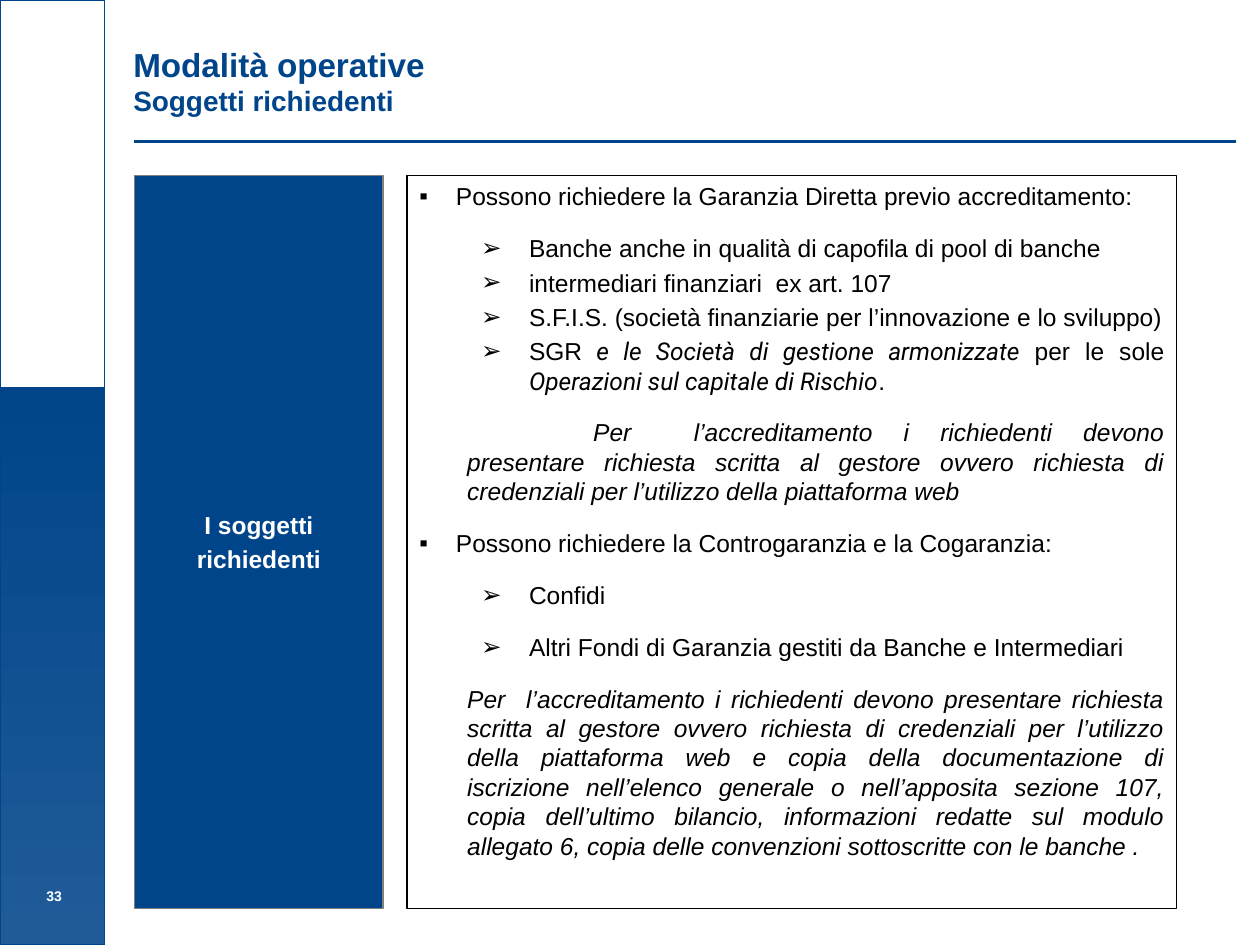
from dataclasses import dataclass

from lxml.etree import SubElement
from pptx import Presentation
from pptx.dml.color import RGBColor as Rgb
from pptx.enum.shapes import MSO_CONNECTOR as Connector, MSO_SHAPE as Shape
from pptx.enum.text import MSO_ANCHOR as Anchor, PP_ALIGN as Align
from pptx.oxml.ns import qn
from pptx.util import Inches, Pt


@dataclass(frozen=True)
class Theme:
    """Colours, fonts and type sizes of the slide."""
    blue: Rgb = Rgb(0x00, 0x45, 0x8A)
    haze: Rgb = Rgb(0x20, 0x5B, 0x98)
    grey: Rgb = Rgb(0x80, 0x80, 0x80)
    white: Rgb = Rgb(0xFF, 0xFF, 0xFF)
    black: Rgb = Rgb(0x00, 0x00, 0x00)
    font: str = "Arial"
    accent_font: str = "Roboto"
    title: Pt = Pt(19)
    subtitle: Pt = Pt(16)
    body: Pt = Pt(14)
    number: Pt = Pt(8)
    outline: Pt = Pt(0.75)
    rule: Pt = Pt(1.75)
    before: Pt = Pt(2.8)
    after: Pt = Pt(10)


THEME = Theme()

LAYOUTS = {
    "topic": {"margin": 0.29, "hanging": 0.29, "bullet": "▪", "level": 0},
    "item": {"margin": 0.87, "hanging": 0.38, "bullet": "➢", "level": 1},
    "note": {"margin": 0.38, "hanging": 0.38, "bullet": None, "level": 0},
}

REQUEST = ("Per  l’accreditamento i richiedenti devono presentare richiesta scritta al gestore "
           "ovvero richiesta di credenziali per l’utilizzo della piattaforma web")
DOCUMENTS = (" e copia della documentazione di iscrizione nell’elenco generale o nell’apposita "
             "sezione 107, copia dell’ultimo bilancio, informazioni redatte sul modulo allegato 6, "
             "copia delle convenzioni sottoscritte con le banche .")

PLAIN = {}
SLANTED = {"italic": True}
ACCENT = {"italic": True, "name": THEME.accent_font}

RULES = [
    ("topic", True, None, [("Possono richiedere la Garanzia Diretta previo accreditamento:", PLAIN)]),
    ("item", False, None, [("Banche anche in qualità di capofila di pool di banche", PLAIN)]),
    ("item", False, None, [("intermediari finanziari  ex art. 107 ", PLAIN)]),
    ("item", False, None, [("S.F.I.S. (società finanziarie per l’innovazione e lo sviluppo)", PLAIN)]),
    ("item", True, 0.12, [("SGR", PLAIN), (" e le Società di gestione armonizzate ", ACCENT),
                          ("per le sole ", PLAIN), ("Operazioni sul capitale di Rischio", ACCENT),
                          (".", PLAIN)]),
    ("note", True, 0.12, [("\t\t" + REQUEST, SLANTED)]),
    ("topic", True, None, [("Possono richiedere la Controgaranzia e la Cogaranzia:", PLAIN)]),
    ("item", True, None, [("Confidi", PLAIN)]),
    ("item", True, None, [("Altri Fondi di Garanzia gestiti da Banche e Intermediari", PLAIN)]),
    ("note", True, None, [("\t" + REQUEST + DOCUMENTS, SLANTED)]),
]


def apply(target, values):
    """Set each named value on the target."""
    for name, value in values.items():
        setattr(target, name, value)


def add_panel(slide, place, outline, fill=None):
    """Draw an outlined rectangle, filled or empty."""
    panel = slide.shapes.add_shape(Shape.RECTANGLE, *map(Inches, place))
    panel.shadow.inherit = False
    panel.line.color.rgb = outline
    panel.line.width = THEME.outline
    if fill is None:
        panel.fill.background()
    else:
        panel.fill.solid()
        panel.fill.fore_color.rgb = fill
    return panel


def add_fade(panel):
    """Fade a panel from blue at the top to haze at the bottom."""
    panel.fill.gradient()
    panel.fill.gradient_angle = 270
    for stop, colour in zip(panel.fill.gradient_stops, (THEME.blue, THEME.haze)):
        stop.color.rgb = colour


def add_rule(slide, left, right, top):
    """Draw the line below the heading."""
    rule = slide.shapes.add_connector(Connector.STRAIGHT, *map(Inches, (left, top, right, top)))
    rule.line.color.rgb = THEME.blue
    rule.line.width = THEME.rule
    SubElement(rule.element.spPr, qn("a:effectLst"))


def prepare_frame(holder, anchor, side=0.1):
    """Return the text frame of a holder with its insets and anchor set."""
    frame = holder.text_frame
    apply(frame, {"word_wrap": True, "vertical_anchor": anchor,
                  "margin_left": Inches(side), "margin_right": Inches(side),
                  "margin_top": Inches(0.05), "margin_bottom": Inches(0.05)})
    return frame


def next_paragraph(frame, values):
    """Return a fresh paragraph, spaced from the one before it."""
    if frame.paragraphs[0].runs:
        paragraph = frame.add_paragraph()
        paragraph.space_before = THEME.before
    else:
        paragraph = frame.paragraphs[0]
        paragraph.space_before = Pt(0)
    apply(paragraph, values)
    return paragraph


def add_run(paragraph, text, size, colour, **values):
    """Add a formatted run."""
    run = paragraph.add_run()
    run.text = text
    run.font.color.rgb = colour
    apply(run.font, {"name": THEME.font, "size": size, **values})


def set_indent(paragraph, layout, tab):
    """Give a paragraph its hanging indent, bullet and tab stops."""
    properties = paragraph._p.get_or_add_pPr()
    properties.set("marL", str(Inches(layout["margin"])))
    properties.set("indent", str(-Inches(layout["hanging"])))
    properties.set("defTabSz", str(Inches(1)))
    if layout["bullet"]:
        SubElement(properties, qn("a:buFont"), typeface=THEME.font)
        SubElement(properties, qn("a:buChar"), char=layout["bullet"])
    else:
        SubElement(properties, qn("a:buNone"))
    if tab:
        stops = SubElement(properties, qn("a:tabLst"))
        SubElement(stops, qn("a:tab"), pos=str(Inches(tab)), algn="l")


def add_sidebar(slide):
    """Draw the left band with the page number."""
    add_fade(add_panel(slide, (0, 3.08, 0.83, 4.42), THEME.blue))
    add_panel(slide, (0, 0, 0.83, 3.12), THEME.blue)
    number = slide.shapes.add_textbox(*map(Inches, (0, 6.73, 0.86, 0.5)))
    paragraph = next_paragraph(prepare_frame(number, Anchor.BOTTOM), {"alignment": Align.CENTER})
    add_run(paragraph, "33", THEME.number, THEME.white, bold=True)


def add_heading(slide):
    """Write the title and subtitle."""
    heading = slide.shapes.add_textbox(*map(Inches, (0.96, 0.3, 8.48, 0.69)))
    paragraph = next_paragraph(prepare_frame(heading, Anchor.TOP), {"alignment": Align.LEFT})
    add_run(paragraph, "Modalità operative", THEME.title, THEME.blue, bold=True)
    paragraph.add_line_break()
    add_run(paragraph, "Soggetti richiedenti", THEME.subtitle, THEME.blue, bold=True)


def add_subject(slide):
    """Draw the blue panel that names the subject."""
    subject = add_panel(slide, (1.07, 1.39, 1.97, 5.82), THEME.grey, THEME.blue)
    frame = prepare_frame(subject, Anchor.MIDDLE, 0.09)
    for line in ("I soggetti", "richiedenti"):
        paragraph = next_paragraph(frame, {"alignment": Align.CENTER})
        add_run(paragraph, line, THEME.body, THEME.white, bold=True)


def add_requirements(slide):
    """Write the framed list of applicants and requests."""
    frame = prepare_frame(add_panel(slide, (3.23, 1.39, 6.11, 5.82), THEME.black), Anchor.TOP)
    for kind, spaced, tab, runs in RULES:
        layout = LAYOUTS[kind]
        paragraph = next_paragraph(frame, {
            "alignment": Align.JUSTIFY, "level": layout["level"],
            "space_after": THEME.after if spaced else Pt(0)})
        set_indent(paragraph, layout, tab)
        for text, style in runs:
            add_run(paragraph, text, THEME.body, THEME.black, **style)


def main():
    """Build and save the slide."""
    deck = Presentation()
    apply(deck, {"slide_width": Inches(10), "slide_height": Inches(7.5)})
    slide = deck.slides.add_slide(deck.slide_layouts[6])
    add_rule(slide, 1.06, 9.81, 1.12)
    add_sidebar(slide)
    add_heading(slide)
    add_subject(slide)
    add_requirements(slide)
    deck.save("out.pptx")


if __name__ == "__main__":
    main()
